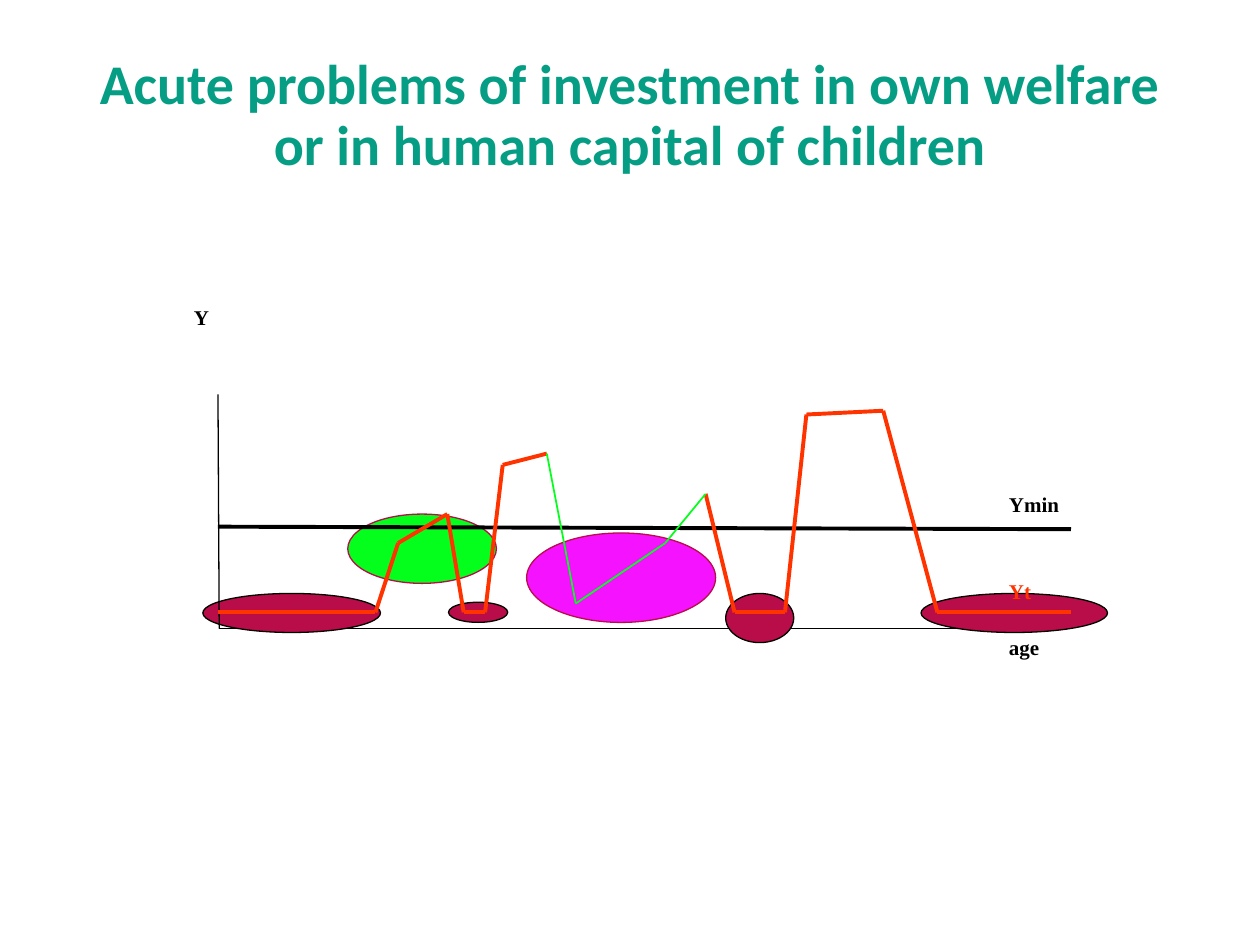
from itertools import pairwise

from lxml import etree
from pptx import Presentation
from pptx.dml.color import RGBColor
from pptx.enum.shapes import MSO_CONNECTOR, MSO_SHAPE
from pptx.enum.text import MSO_ANCHOR, MSO_AUTO_SIZE, PP_ALIGN
from pptx.oxml.ns import qn
from pptx.util import Inches, Pt

STRAIGHT = MSO_CONNECTOR.STRAIGHT
ELLIPSE = MSO_SHAPE.OVAL
TOP = MSO_ANCHOR.TOP
GROW = MSO_AUTO_SIZE.SHAPE_TO_FIT_TEXT
LEFT, CENTER = PP_ALIGN.LEFT, PP_ALIGN.CENTER

# The slide is a grid of 100 columns by 75 rows of square cells
COLUMNS, ROWS = 100, 75
CELL = Inches(0.1)

COLORS = {
    "black": "000000",
    "title": "059D84",
    "income": "FF3300",
    "crimson": "B80D48",
    "green": "04FF1D",
    "magenta": "F512FF",
}

# Chart levels and edges, in grid cells
AXIS_X, AGE_Y, RIGHT = 17.3, 49.9, 85
LOW_INCOME = 48.6
LABEL_X, LABEL_HEIGHT = 79.1, 3

EARLY_INCOME = [
    (AXIS_X, LOW_INCOME), (29.8, LOW_INCOME), (31.6, 43.1), (35.5, 40.8),
    (36.8, LOW_INCOME), (38.5, LOW_INCOME), (39.9, 36.9), (43.4, 36),
]
LATE_INCOME = [
    (56, 39.2), (58.3, LOW_INCOME), (62.3, LOW_INCOME), (64, 32.9),
    (70.1, 32.6), (74.4, LOW_INCOME), (RIGHT, LOW_INCOME),
]
INVESTMENT_DIP = [EARLY_INCOME[-1], (45.7, 47.9), (52.8, 43.1), LATE_INCOME[0]]

# left, top, width, height, fill, outline
PERIODS = [
    (73.1, 47.1, 14.8, 3.1, "crimson", "black"),
    (27.6, 40.8, 11.8, 5.5, "green", "crimson"),
    (57.6, 47.1, 5.4, 3.9, "crimson", "black"),
    (35.6, 47.8, 4.7, 1.6, "crimson", "black"),
    (16.1, 47.1, 14.1, 3.1, "crimson", "black"),
]
DIP_PERIOD = (41.8, 42.3, 15, 7.1, "magenta", "crimson")

# text, left, top, width, color
LABELS = [
    ("age", LABEL_X, AGE_Y, 6, "black"),
    ("Yt", LABEL_X, 45.4, 6, "income"),
    ("Y", 14.4, 23.7, 3.2, "black"),
    ("Ymin", LABEL_X, 38.5, 7.3, "black"),
]


def cells(*values):
    return [round(value * CELL) for value in values]


def rgb(name):
    return RGBColor.from_string(COLORS[name])


def add_path(slide, points, color, weight):
    """Draw a straight connector between each pair of neighbouring points."""
    for start, end in pairwise(points):
        connector = slide.shapes.add_connector(STRAIGHT, *cells(*start, *end))
        connector.line.color.rgb = rgb(color)
        connector.line.width = Pt(weight)
        etree.SubElement(connector._element.spPr, qn("a:effectLst"))


def add_period(slide, left, top, width, height, fill, outline):
    shape = slide.shapes.add_shape(ELLIPSE, *cells(left, top, width, height))
    shape.shadow.inherit = False
    shape.fill.solid()
    shape.fill.fore_color.rgb = rgb(fill)
    shape.line.color.rgb = rgb(outline)
    shape.line.width = Pt(0.75)


def add_text(slide, text, box, font_name, size, color, alignment=LEFT):
    shape = slide.shapes.add_textbox(*cells(*box))
    frame = shape.text_frame
    frame.word_wrap = True
    frame.vertical_anchor = TOP
    paragraph = frame.paragraphs[0]
    paragraph.alignment = alignment
    run = paragraph.add_run()
    run.text = text
    run.font.name = font_name
    run.font.size = Pt(size)
    run.font.bold = True
    run.font.color.rgb = rgb(color)
    return frame


def add_label(slide, text, left, top, width, color):
    box = (left, top, width, LABEL_HEIGHT)
    frame = add_text(slide, text, box, "Times New Roman", 12, color)
    frame.auto_size = GROW


def main():
    presentation = Presentation()
    presentation.slide_width, presentation.slide_height = cells(COLUMNS, ROWS)
    slide = presentation.slides.add_slide(presentation.slide_layouts[6])

    # Age axis, with the periods of life over it
    add_path(slide, [(17.4, AGE_Y), (RIGHT, AGE_Y)], "black", 0.75)
    for period in PERIODS:
        add_period(slide, *period)

    # Income axis and the minimum income
    add_path(slide, [(AXIS_X, 31.3), (17.4, AGE_Y)], "black", 0.75)
    add_path(slide, [(AXIS_X, 41.8), (RIGHT, 42)], "black", 2.25)

    # Income over the life course, with the dip in the middle
    for points in (EARLY_INCOME, LATE_INCOME):
        add_path(slide, points, "income", 2.25)
    add_period(slide, *DIP_PERIOD)
    add_path(slide, INVESTMENT_DIP, "green", 1)

    # Labels and title
    for label in LABELS:
        add_label(slide, *label)
    title = add_text(
        slide,
        "Acute problems of investment in own welfare or in human capital of children",
        (6.9, 4, 86.2, 12.7), "Calibri", 32, "title", CENTER,
    )
    title.paragraphs[0].line_spacing = 0.9

    presentation.save("out.pptx")


if __name__ == "__main__":
    main()
